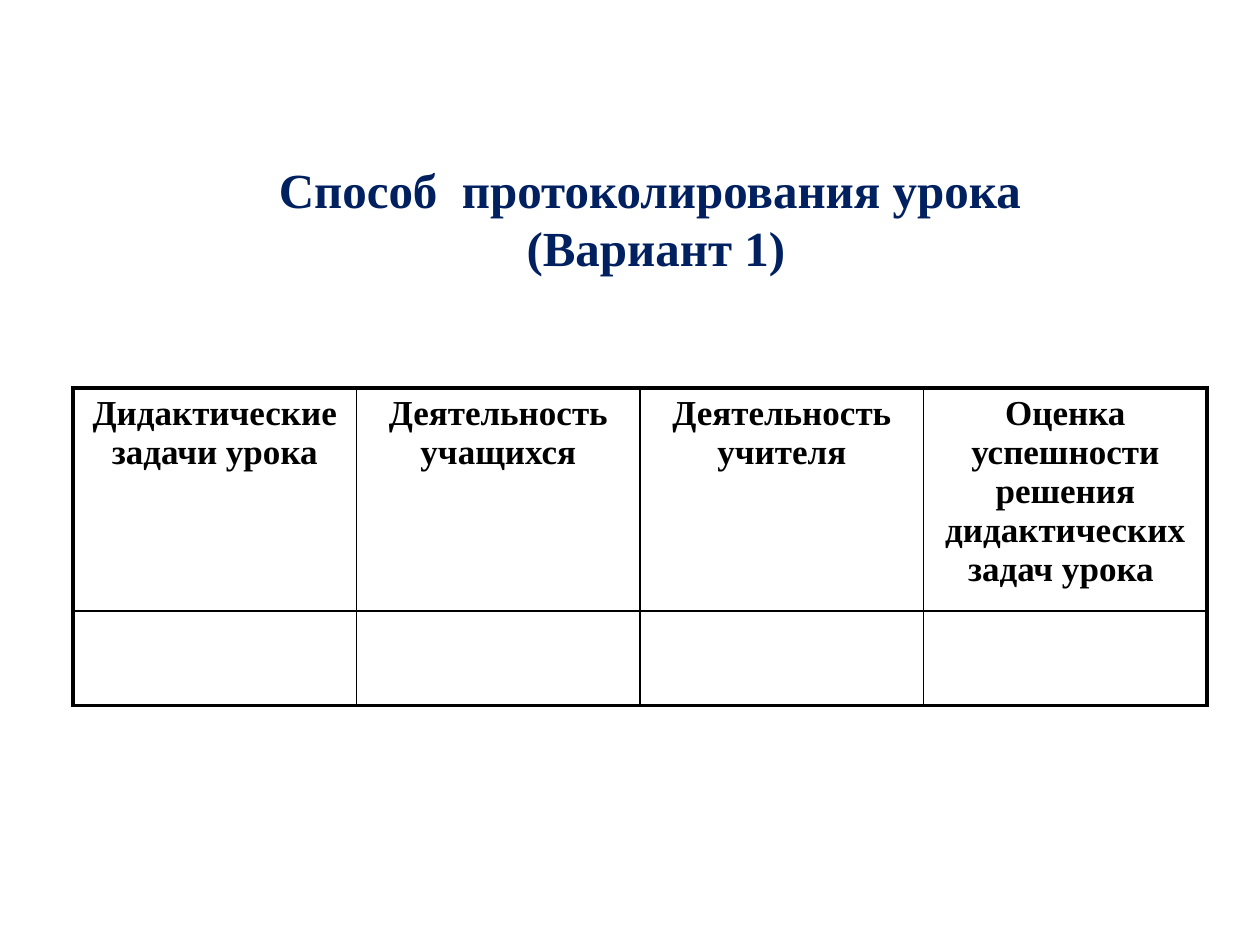
from pptx import Presentation
from pptx.dml.color import RGBColor
from pptx.enum.text import MSO_ANCHOR as Anchor, MSO_AUTO_SIZE as Fit, PP_ALIGN as Align
from pptx.oxml.ns import qn
from pptx.util import Inches, Pt
from lxml.etree import SubElement as Sub

NAVY = RGBColor(0x00, 0x20, 0x60)
BLACK = RGBColor(0, 0, 0)
FACE = "Times New Roman"

TITLE = ["Способ  протоколирования урока ", "(Вариант 1)"]
HEADS = [
    "Дидактические задачи урока",
    "Деятельность учащихся",
    "Деятельность учителя",
    "Оценка успешности решения дидактических задач урока ",
]
ROWS = [HEADS, [""] * len(HEADS)]
HIGHS = [1.77, 0.75]
WIDE = 2.25
THICK, THIN = Pt(2.25), Pt(1)


def style(para, size, color):
    para.alignment = Align.CENTER
    looks = {"name": FACE, "size": Pt(size), "bold": True}
    for key, val in looks.items():
        setattr(para.font, key, val)
    para.font.color.rgb = color


def add_title(slide):
    title = slide.shapes.title
    title.left, title.top = Inches(2.08), Inches(1.21)
    title.width, title.height = Inches(6.25), Inches(1.04)
    frame = title.text_frame
    frame.text = "\n".join(TITLE)
    frame.word_wrap = False
    frame.auto_size = Fit.SHAPE_TO_FIT_TEXT
    frame.vertical_anchor = Anchor.MIDDLE
    for para in frame.paragraphs:
        style(para, 28, NAVY)


def space_before(para, percent):
    """Set the gap above as a share of the line height."""
    gap = Sub(para._p.get_or_add_pPr(), qn("a:spcBef"))
    Sub(gap, qn("a:spcPct"), val=str(percent * 1000))


def add_borders(cell, outer):
    """Draw four black sides, thick where the side is on the table's edge."""
    props = cell._tc.get_or_add_tcPr()
    for side, edge in outer.items():
        line = Sub(props, qn(f"a:ln{side}"), w=str(THICK if edge else THIN))
        fill = Sub(line, qn("a:solidFill"))
        Sub(fill, qn("a:srgbClr"), val=str(BLACK))


def add_grid(slide):
    rows, cols = len(ROWS), len(HEADS)
    table = slide.shapes.add_table(
        rows, cols, Inches(0.58), Inches(3.08),
        Inches(WIDE * cols), Inches(sum(HIGHS))).table
    table.first_row = table.horz_banding = False
    for col in table.columns:
        col.width = Inches(WIDE)
    for r, texts in enumerate(ROWS):
        table.rows[r].height = Inches(HIGHS[r])
        for c, text in enumerate(texts):
            cell = table.cell(r, c)
            cell.text = text
            para = cell.text_frame.paragraphs[0]
            style(para, 20, BLACK)
            space_before(para, 20)
            add_borders(cell, {"L": c == 0, "R": c == cols - 1,
                               "T": r == 0, "B": r == rows - 1})
            cell.fill.background()


def main():
    deck = Presentation()
    deck.slide_width, deck.slide_height = Inches(10), Inches(7.5)
    slide = deck.slides.add_slide(deck.slide_layouts[5])
    add_title(slide)
    add_grid(slide)
    deck.save("out.pptx")


if __name__ == "__main__":
    main()
